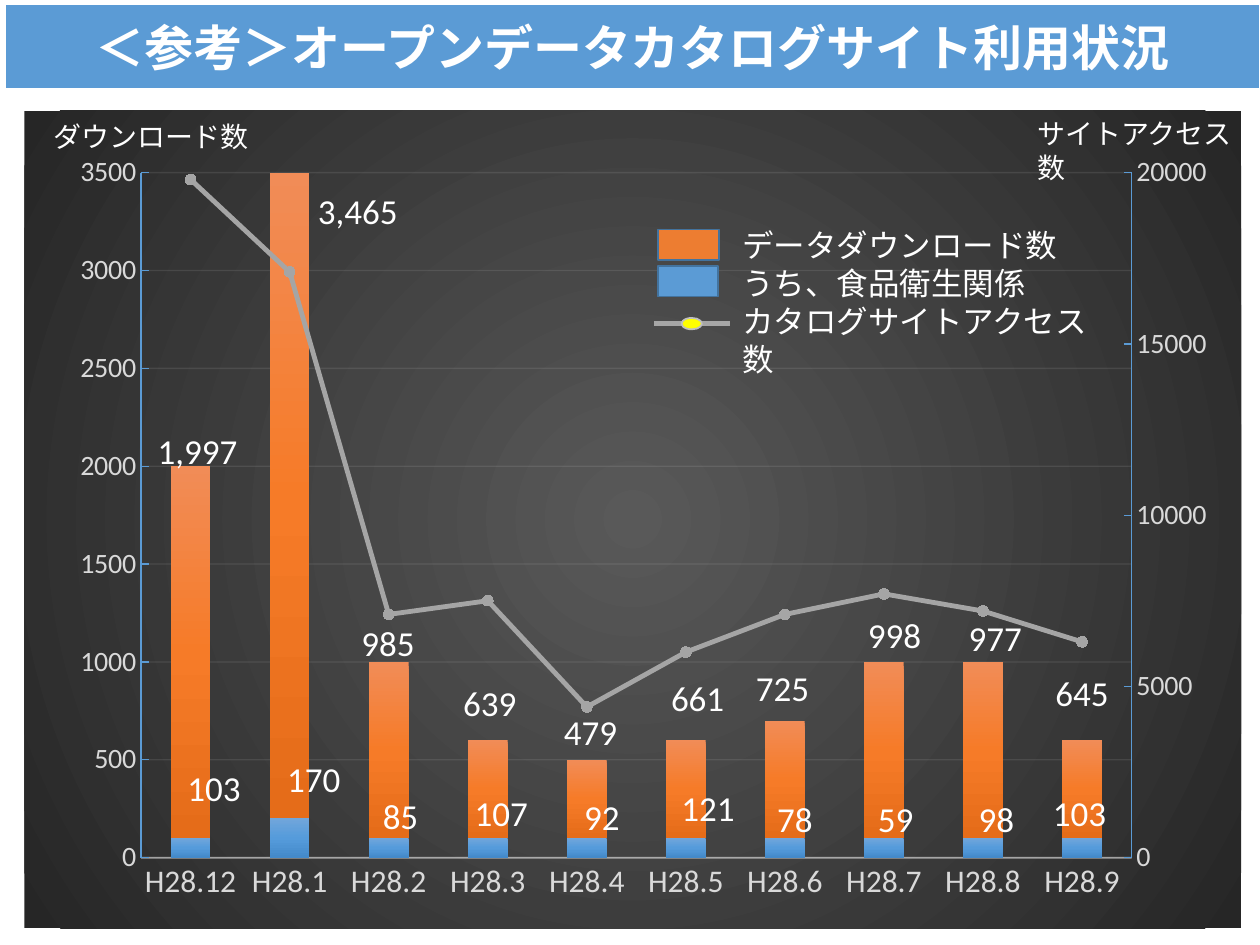
from copy import deepcopy

from pptx import Presentation
from pptx.chart.data import CategoryChartData
from pptx.dml.color import RGBColor
from pptx.enum.chart import XL_CHART_TYPE as ChartType, XL_MARKER_STYLE as Marker, XL_TICK_MARK as Tick
from pptx.enum.shapes import MSO_CONNECTOR as Connector, MSO_SHAPE as Shape
from pptx.enum.text import MSO_ANCHOR as Anchor, MSO_AUTO_SIZE as AutoSize, PP_ALIGN as Align
from pptx.oxml import parse_xml
from pptx.oxml.ns import nsdecls, qn
from pptx.util import Cm, Pt

MONTHS = ["H28.12"] + [f"H28.{month}" for month in range(1, 10)]
DOWNLOADS = [1997, 3465, 985, 639, 479, 661, 725, 998, 977, 645]
FOOD = [103, 170, 85, 107, 92, 121, 78, 59, 98, 103]
ACCESSES = [19800, 17100, 7100, 7500, 4400, 6000, 7100, 7700, 7200, 6300]

# Label corners within the chart, in cm
DOWNLOAD_SPOTS = [(1.88, 6.3), (5.11, 1.45), (5.72, 10.16), (7.77, 11.38), (9.8, 11.96),
                  (11.96, 11.28), (13.67, 11.07), (15.93, 10.01), (17.96, 10.06), (19.71, 11.18)]
FOOD_SPOTS = [(2.21, 13.08), (4.22, 12.9), (5.97, 13.64), (8, 13.59), (10.03, 13.67),
              (12.17, 13.49), (13.92, 13.72), (15.95, 13.72), (17.98, 13.72), (19.66, 13.59)]
DOWNLOAD_NAME, FOOD_NAME, ACCESS_NAME = LEGEND = [
    "データダウンロード数", "うち、食品衛生関係", "カタログサイトアクセス数"]


def color(value):
    return RGBColor.from_string(value)


def set_all(target, values):
    for name, value in values.items():
        setattr(target, name, value)


def style_font(font, size, hue="FFFFFF", name="Calibri", bold=False):
    set_all(font, {"size": Pt(size), "name": name, "bold": bold})
    font.color.rgb = color(hue)


def style_line(line, hue, width):
    line.color.rgb = color(hue)
    line.width = Pt(width)


def gradient(stops, direction):
    marks = "".join(f'<a:gs pos="{at * 1000}"><a:srgbClr val="{hue}"/></a:gs>' for at, hue in stops)
    return f"<a:gradFill><a:gsLst>{marks}</a:gsLst>{direction}</a:gradFill>"


def chart_xml(tag, content):
    return parse_xml(f'<c:{tag} {nsdecls("c", "a")}>{content}</c:{tag}>')


def to_hundreds(values):
    return [round(value, -2) for value in values]


def add_box(slide, kind, box, fill, line, width):
    shape = slide.shapes.add_shape(kind, *map(Cm, box))
    shape.shadow.inherit = False
    shape.fill.solid()
    shape.fill.fore_color.rgb = color(fill)
    style_line(shape.line, line, width)
    return shape


def add_text(slide, box, lines, size, anchor=Anchor.TOP, align=Align.LEFT):
    frame = slide.shapes.add_textbox(*map(Cm, box)).text_frame
    set_all(frame, {"word_wrap": True, "vertical_anchor": anchor,
                    "auto_size": AutoSize.SHAPE_TO_FIT_TEXT, "text": "\n".join(lines)})
    for paragraph in frame.paragraphs:
        paragraph.alignment = align
        style_font(paragraph.runs[0].font, size)


def add_title(slide, box):
    banner = add_box(slide, Shape.RECTANGLE, box, "5B9BD5", "FFFFFF", 1.5)
    set_all(banner.text_frame, {"text": "＜参考＞オープンデータカタログサイト利用状況",
                                "vertical_anchor": Anchor.MIDDLE, "word_wrap": True})
    heading = banner.text_frame.paragraphs[0]
    heading.alignment = Align.CENTER
    style_font(heading.runs[0].font, 28, name="Noto Sans CJK JP", bold=True)


def move_accesses_to_right_axis(chart):
    """Turn the third series into a line measured on its own axis."""
    plot_area = chart.element.xpath("c:chart/c:plotArea")[0]
    columns = plot_area.find(qn("c:barChart"))
    accesses = columns.findall(qn("c:ser"))[2]
    for flag in accesses.findall(qn("c:invertIfNegative")):
        accesses.remove(flag)
    line_chart = chart_xml("lineChart", '<c:grouping val="standard"/><c:varyColors val="0"/>'
                           '<c:marker val="1"/><c:axId val="5001"/><c:axId val="5002"/>')
    line_chart.insert(2, accesses)
    columns.addnext(line_chart)

    months, left = plot_area.find(qn("c:catAx")), plot_area.find(qn("c:valAx"))
    left.find(qn("c:crosses")).addnext(parse_xml(f'<c:crossBetween {nsdecls("c")} val="between"/>'))
    right, hidden_months = deepcopy(left), deepcopy(months)
    right.remove(right.find(qn("c:majorGridlines")))
    changes = [
        (right, {"axId": 5002, "crossAx": 5001, "axPos": "r", "crosses": "max",
                 "scaling/c:max": 20000, "majorUnit": 5000}),
        (hidden_months, {"axId": 5001, "crossAx": 5002, "delete": 1}),
    ]
    for axis, values in changes:
        for tag, value in values.items():
            axis.xpath(f"c:{tag}")[0].set("val", str(value))
    left.addnext(right)
    right.addnext(hidden_months)


def add_usage_chart(slide, box):
    data = CategoryChartData()
    data.categories = MONTHS
    data.add_series(FOOD_NAME, to_hundreds(FOOD))
    data.add_series(DOWNLOAD_NAME, to_hundreds(
        total - food for total, food in zip(DOWNLOADS, FOOD)))
    data.add_series(ACCESS_NAME, ACCESSES)
    chart = slide.shapes.add_chart(ChartType.COLUMN_STACKED, *map(Cm, box), data).chart
    set_all(chart, {"has_legend": False, "has_title": False})
    style_font(chart.font, 10, "000000")
    set_all(chart.plots[0], {"gap_width": 150, "overlap": 100, "vary_by_categories": False})

    # Axes
    months, left = chart.category_axis, chart.value_axis
    set_all(months, {"major_tick_mark": Tick.NONE, "has_major_gridlines": False})
    set_all(left, {"major_tick_mark": Tick.INSIDE, "has_major_gridlines": True,
                   "minimum_scale": 0, "maximum_scale": 3500, "major_unit": 500})
    style_font(months.tick_labels.font, 18, "D9D9D9")
    style_font(left.tick_labels.font, 16, "D9D9D9")
    style_line(months.format.line, "F2F2F2", 1)
    style_line(left.format.line, "5B9BD5", 0.75)
    style_line(left.major_gridlines.format.line, "F2F2F2", 0.75)
    for place, percent in [("c:catAx/c:spPr", 54), ("c:valAx/c:majorGridlines", 10)]:
        ink = chart.element.xpath(f".//{place}//a:srgbClr")[0]
        ink.append(parse_xml(f'<a:alpha {nsdecls("a")} val="{percent * 1000}"/>'))

    move_accesses_to_right_axis(chart)

    # Series colours
    shades = [("71A6DB", "559BDB", "448ACA"), ("F18C57", "F67B28", "E56C19")]
    for series, hues in zip(chart.element.xpath(".//c:barChart/c:ser"), shades):
        fill = gradient(zip((0, 50, 100), hues), '<a:lin ang="5400000" scaled="0"/>')
        series.find(qn("c:tx")).addnext(chart_xml("spPr", fill))
    accesses = chart.plots[1].series[0]
    accesses.smooth = False
    style_line(accesses.format.line, "A5A5A5", 2.75)
    set_all(accesses.marker, {"style": Marker.CIRCLE, "size": 6})
    accesses.marker.format.fill.solid()
    accesses.marker.format.fill.fore_color.rgb = color("FFFF00")
    style_line(accesses.marker.format.line, "A5A5A5", 0.75)

    # Plot position and dark backdrop
    plot_area = chart.element.xpath("c:chart/c:plotArea")[0]
    for layout in plot_area.findall(qn("c:layout")):
        plot_area.remove(layout)
    spots = "".join(f'<c:{tag}Mode val="edge"/>' for tag in "xy") + "".join(
        f'<c:{tag} val="{value}"/>' for tag, value in zip("xywh", (0.096, 0.076, 0.814, 0.838)))
    plot_area.insert(0, chart_xml(
        "layout", f'<c:manualLayout><c:layoutTarget val="inner"/>{spots}</c:manualLayout>'))
    backdrop = gradient([(0, "595959"), (100, "262626")], '<a:path path="circle">'
                        '<a:fillToRect l="50000" t="50000" r="50000" b="50000"/></a:path>')
    chart.element.find(qn("c:txPr")).addprevious(
        chart_xml("spPr", backdrop + "<a:ln><a:noFill/></a:ln>"))


def add_legend(slide, box):
    left, top, width, height = box
    add_text(slide, (left + 1.53, top, width - 1.53, height), LEGEND, 18)
    for dx, dy, fill in [(0.08, 0.93, "5B9BD5"), (0.09, 0.19, "ED7D31")]:
        add_box(slide, Shape.RECTANGLE, (left + dx, top + dy, 1.22, 0.61), fill, "43739E", 1)
    line_y = top + 2.08
    stroke = slide.shapes.add_connector(
        Connector.STRAIGHT, *map(Cm, (left, line_y, left + 1.53, line_y)))
    style_line(stroke.line, "A6A6A6", 3.25)
    stroke.element.spPr.append(parse_xml(f'<a:effectLst {nsdecls("a")}/>'))
    add_box(slide, Shape.OVAL, (left + 0.56, top + 1.97, 0.41, 0.23), "FFFF00", "BFBFBF", 1)


def add_labels(slide, box):
    left, top = box[:2]
    # Bar values
    for values, spots in [(DOWNLOADS, DOWNLOAD_SPOTS), (FOOD, FOOD_SPOTS)]:
        for value, (dx, dy) in zip(values, spots):
            add_text(slide, (left + dx, top + dy, 3.23, 1.12), [f"{value:,}"], 20,
                     Anchor.MIDDLE, Align.CENTER)
    # Axis captions
    for caption, dx, dy in [("ダウンロード数", 0.34, 0.05), ("サイトアクセス数", 20.18, 0)]:
        add_text(slide, (left + dx, top + dy, 4.47, 0.94), [caption], 16)


def main():
    deck = Presentation()
    set_all(deck, {"slide_width": Cm(25.4), "slide_height": Cm(19.05)})
    slide = deck.slides.add_slide(deck.slide_layouts[6])
    chart_box = (0.49, 2.23, 24.53, 16.48)
    add_usage_chart(slide, chart_box)
    add_legend(slide, (13.18, 4.44, 9.38, 2.57))
    add_labels(slide, chart_box)
    add_title(slide, (0.1, 0.08, 25.3, 1.73))
    deck.save("out.pptx")


if __name__ == "__main__":
    main()
